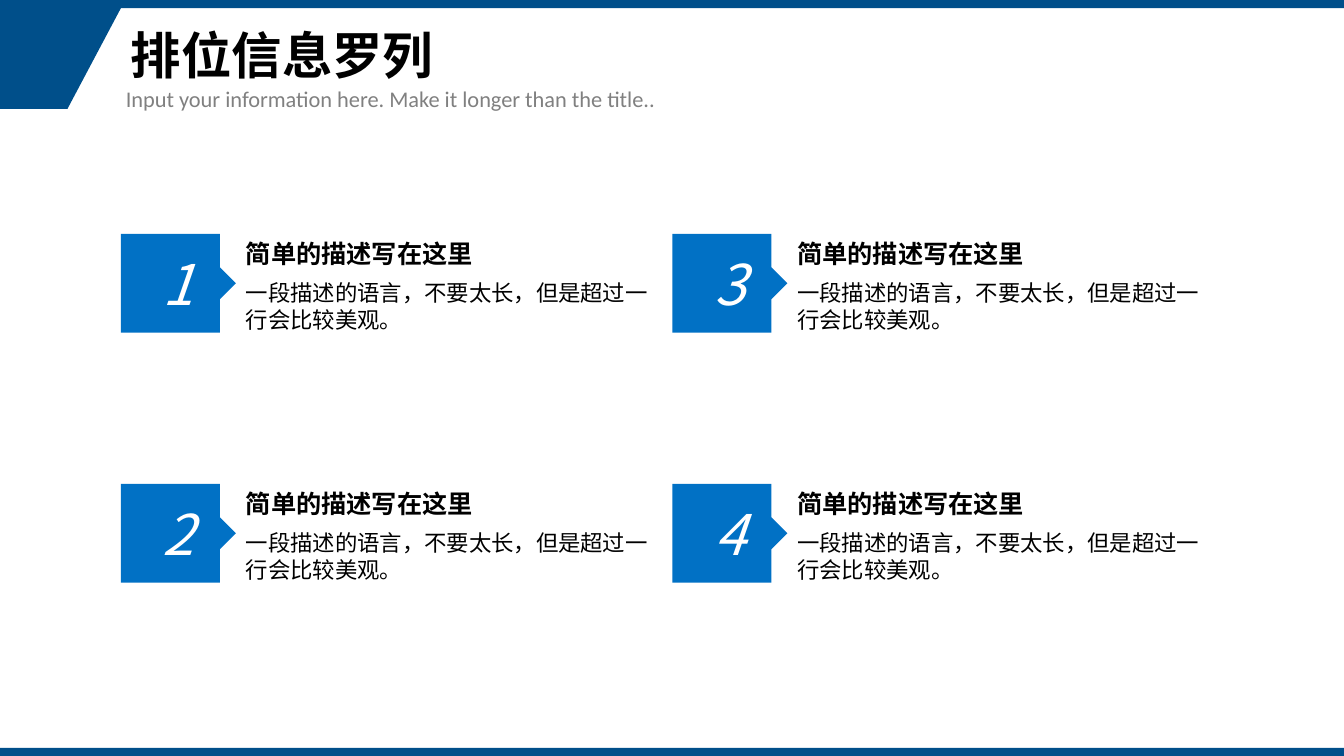
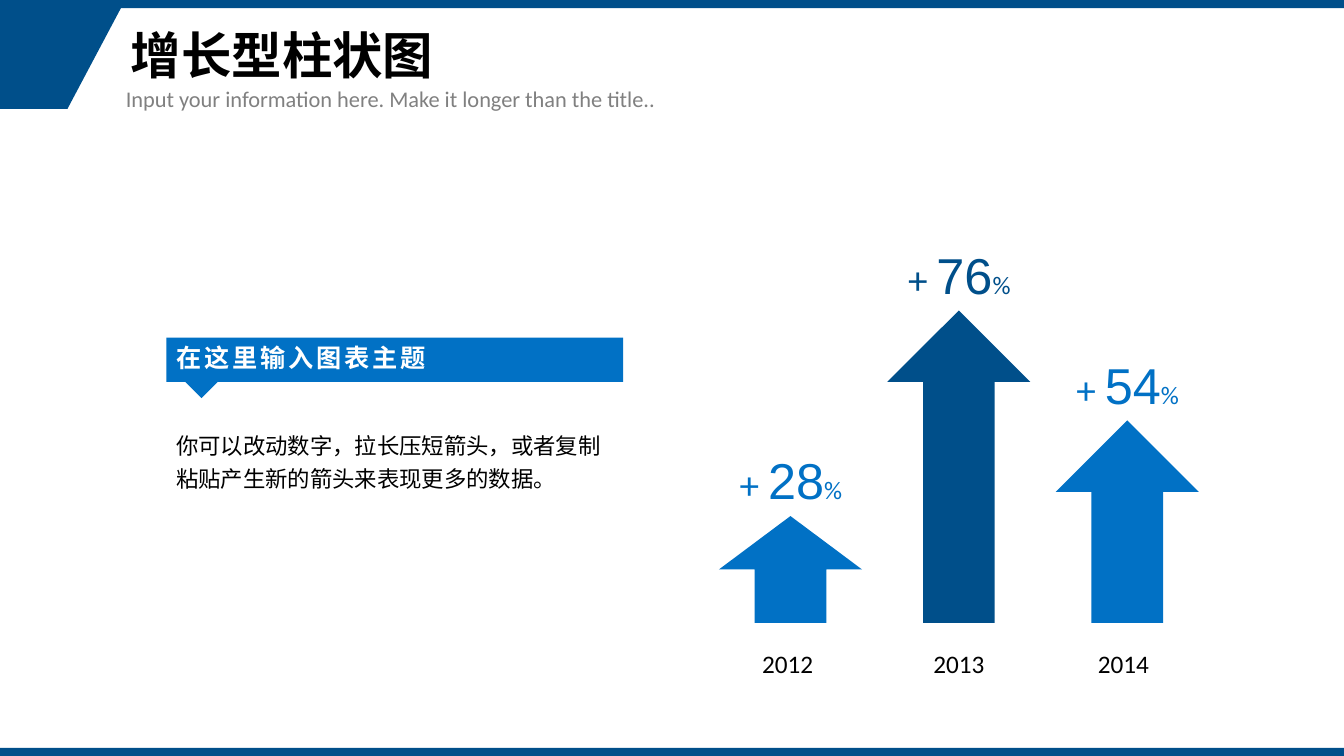
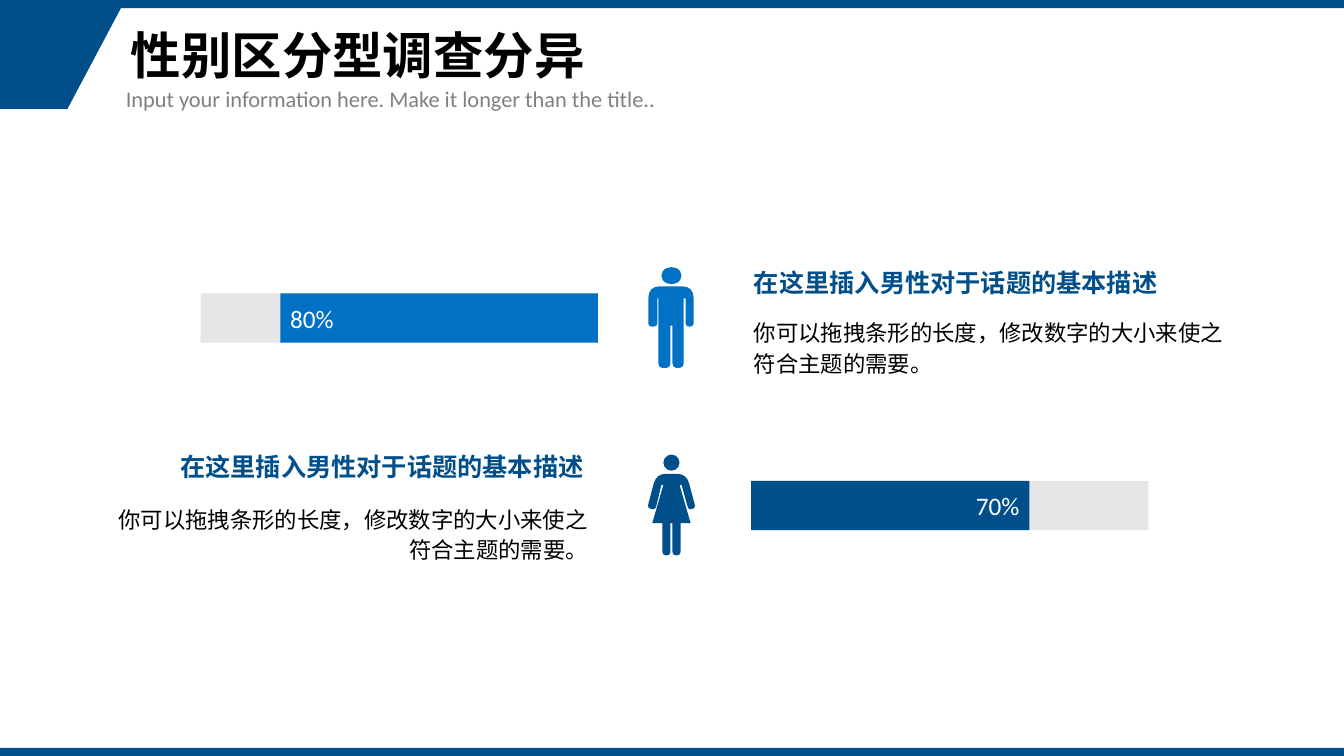
from pptx import Presentation
from pptx import util as u
from pptx.dml.color import RGBColor
from pptx.enum import shapes as es, text as et
from pptx.oxml.ns import qn
from lxml import etree

PX = 9144
INK = {"navy": "004F8A", "blue": "0171C5", "gray": "808080",
       "pale": "E7E6E6", "white": "FFFFFF", "black": "000000"}
HAN, LATIN, ARIAL = "Noto Sans CJK SC", "Calibri", "Arial"
KIND = es.MSO_SHAPE
LEFT, MID, RIGHT = et.PP_ALIGN.LEFT, et.PP_ALIGN.CENTER, et.PP_ALIGN.RIGHT


def emu(n):
    return u.Emu(round(n * PX))


def bend(corners):
    spots = []
    for i, (x, y, r) in enumerate(corners):
        if not r:
            spots.append((x, y))
            continue
        ends = []
        for ox, oy, _ in (corners[i - 1], corners[(i + 1) % len(corners)]):
            size = ((ox - x) ** 2 + (oy - y) ** 2) ** 0.5
            cut = min(r, size / 2) / size
            ends.append((x + (ox - x) * cut, y + (oy - y) * cut))
        (ax, ay), (bx, by) = ends
        for t in (0, 0.25, 0.5, 0.75, 1):
            a, m, b = (1 - t) ** 2, 2 * t * (1 - t), t * t
            spots.append((a * ax + m * x + b * bx, a * ay + m * y + b * by))
    return spots


class Deck:
    def __init__(self):
        self.prs = Presentation()
        self.prs.slide_width, self.prs.slide_height = emu(1333), emu(750)
        self.slide = None

    def start(self, title):
        self.slide = self.prs.slides.add_slide(self.prs.slide_layouts[6])
        self.poly([(0, 8), (120, 8), (67, 108), (0, 108)], "navy")
        for top in (0, 742):
            self.shape(KIND.RECTANGLE, (0, top, 1333, 8), "navy")
        self.label((120, 8, 1122, 100), [(title, 36, HAN, "black")], bold=True,
                   wrap=True, space=0.9, anchor=et.MSO_ANCHOR.MIDDLE, grow=False)
        self.label((115, 80, 780, 37),
                   [("Input your information here. Make it longer than the title..",
                     16, LATIN, "gray")], wrap=True)

    def paint(self, item, ink):
        item.shadow.inherit = False
        item.fill.solid()
        item.fill.fore_color.rgb = RGBColor.from_string(INK[ink])
        item.line.fill.background()
        return item

    def shape(self, kind, box, ink, turn=0):
        item = self.slide.shapes.add_shape(kind, *map(emu, box))
        item.rotation = turn
        return self.paint(item, ink)

    def poly(self, spots, ink):
        first, *rest = [(emu(x), emu(y)) for x, y in spots]
        form = self.slide.shapes.build_freeform(*first, scale=1.0)
        form.add_line_segments(rest, close=True)
        return self.paint(form.convert_to_shape(), ink)

    def words(self, item, runs, align=LEFT, bold=False, slant=False,
              wrap=True, space=None, anchor=et.MSO_ANCHOR.MIDDLE, track=0):
        frame = item.text_frame
        frame.word_wrap, frame.vertical_anchor = wrap, anchor
        para = frame.paragraphs[0]
        para.alignment = align
        if space:
            para.line_spacing = space
        for copy, size, face, ink in runs:
            run = para.add_run()
            run.text = copy
            font = run.font
            font.size, font.name = u.Pt(size), face
            font.bold, font.italic = bold, slant
            font.color.rgb = RGBColor.from_string(INK[ink])
            props = run._r.get_or_add_rPr()
            etree.SubElement(props, qn("a:ea")).set("typeface", HAN)
            if track:
                props.set("spc", str(track * 100))

    def label(self, box, runs, wrap=False, grow=True,
              anchor=et.MSO_ANCHOR.TOP, **style):
        item = self.slide.shapes.add_textbox(*map(emu, box))
        self.words(item, runs, wrap=wrap, anchor=anchor, **style)
        if grow:
            item.text_frame.auto_size = et.MSO_AUTO_SIZE.SHAPE_TO_FIT_TEXT

    def card(self, x, y, mark):
        tag = [(0, 0), (98, 0), (98, 33), (114, 49), (98, 65), (98, 98), (0, 98)]
        item = self.poly([(x + dx, y + dy) for dx, dy in tag], "blue")
        self.words(item, [(mark, 40, HAN, "white")], align=MID, slant=True)
        self.label((x + 114, y, 247, 40),
                   [("简单的描述写在这里", 18, HAN, "black")], bold=True)
        self.label((x + 114, y + 40, 432, 64),
                   [("一段描述的语言，不要太长，但是超过一行会比较美观。",
                     16, HAN, "black")], wrap=True)

    def arrow(self, x, tall, value, year, left, ink):
        top = 618 - tall
        self.shape(KIND.UP_ARROW, (x, top, 142, tall), ink)
        self.label((x + 10, top - 71, 123, 71),
                   [("+ ", 28, LATIN, ink), (value, 36, ARIAL, ink),
                    ("%", 18, LATIN, ink)], align=MID)
        self.label((left, 638, 71, 40), [(year, 18, LATIN, "black")])

    def bar(self, x, y, start, wide, value, ink, align):
        self.shape(KIND.RECTANGLE, (x, y, 394, 49), "pale")
        item = self.shape(KIND.RECTANGLE, (start, y, wide, 49), ink)
        self.words(item, [(value, 18, LATIN, "white")], align=align)

    def note(self, head, body, align):
        self.label((*head, 424, 40),
                   [("在这里插入男性对于话题的基本描述", 18, LATIN, "navy")], bold=True)
        self.label((*body, 497, 71),
                   [("你可以拖拽条形的长度，修改数字的大小来使之符合主题的需要。",
                     16, LATIN, "black")], wrap=True, align=align, space=1.14)

    def person(self, head, corners, ink):
        self.shape(KIND.OVAL, head, ink)
        self.poly(bend(corners), ink)


MAN = [(643, 284, 12), (688, 284, 12), (688, 324, 4), (680, 324, 4),
       (680, 296, 0), (678, 296, 0), (678, 365, 5), (667, 365, 5),
       (667, 323, 0), (665, 323, 0), (665, 365, 5), (653, 365, 5),
       (653, 296, 0), (652, 296, 0), (652, 324, 4), (643, 324, 4)]
WOMAN = [(651, 470, 10), (681, 470, 10), (690, 504, 4), (683, 506, 4),
         (676, 481, 0), (674, 481, 0), (685, 519, 0), (675, 519, 0),
         (675, 551, 4), (667, 551, 4), (667, 519, 0), (665, 519, 0),
         (665, 551, 4), (657, 551, 4), (657, 519, 0), (647, 519, 0),
         (658, 481, 0), (656, 481, 0), (650, 506, 4), (642, 504, 4)]


def main():
    deck = Deck()

    deck.start("排位信息罗列")
    for i in range(4):
        deck.card(120 + i // 2 * 547, 232 + i % 2 * 248, str(i + 1))

    deck.start("增长型柱状图")
    bars = [(106, "28", "2012", 746, "blue"), (310, "76", "2013", 916, "navy"),
            (201, "54", "2014", 1079, "blue")]
    for i, data in enumerate(bars):
        deck.arrow(713 + 167 * i, *data)
    deck.label((165, 417, 453, 77),
               [("你可以改动数字，拉长压短箭头，或者复制粘贴产生新的箭头来表现更多的数据。",
                 16, HAN, "black")], wrap=True, space=1.25)
    band = deck.shape(KIND.RECTANGLE, (165, 335, 453, 44), "blue")
    deck.words(band, [("在这里输入图表主题", 18, HAN, "white")], bold=True,
               anchor=et.MSO_ANCHOR.TOP, track=2)
    deck.shape(KIND.RIGHT_TRIANGLE, (188, 366, 24, 24), "blue", turn=315)

    deck.start("性别区分型调查分异")
    deck.person((656, 265, 20, 17), MAN, "blue")
    deck.person((658, 451, 16, 16), WOMAN, "navy")
    deck.bar(199, 291, 278, 315, "80%", "blue", LEFT)
    deck.bar(745, 477, 745, 276, "70%", "navy", RIGHT)
    deck.note((738, 260), (738, 308), LEFT)
    deck.note((169, 443), (96, 493), RIGHT)

    deck.prs.save("out.pptx")


if __name__ == "__main__":
    main()
